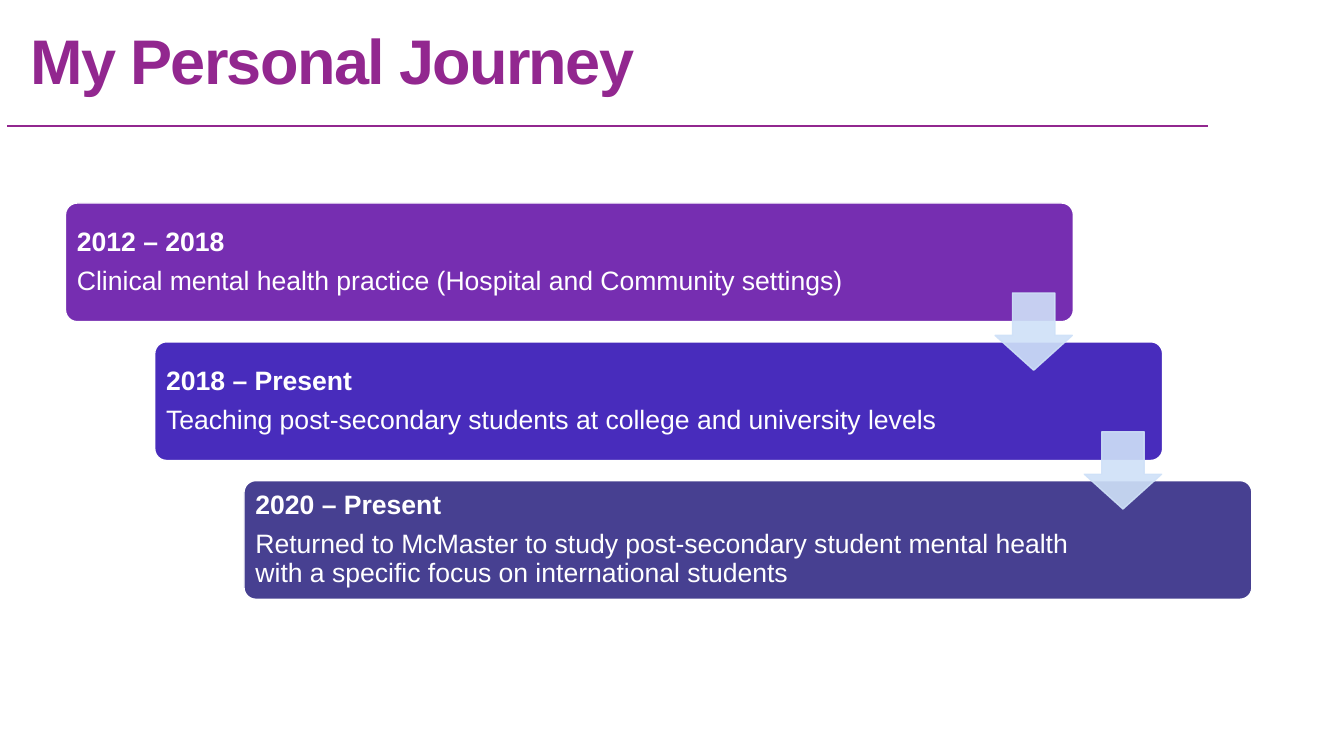
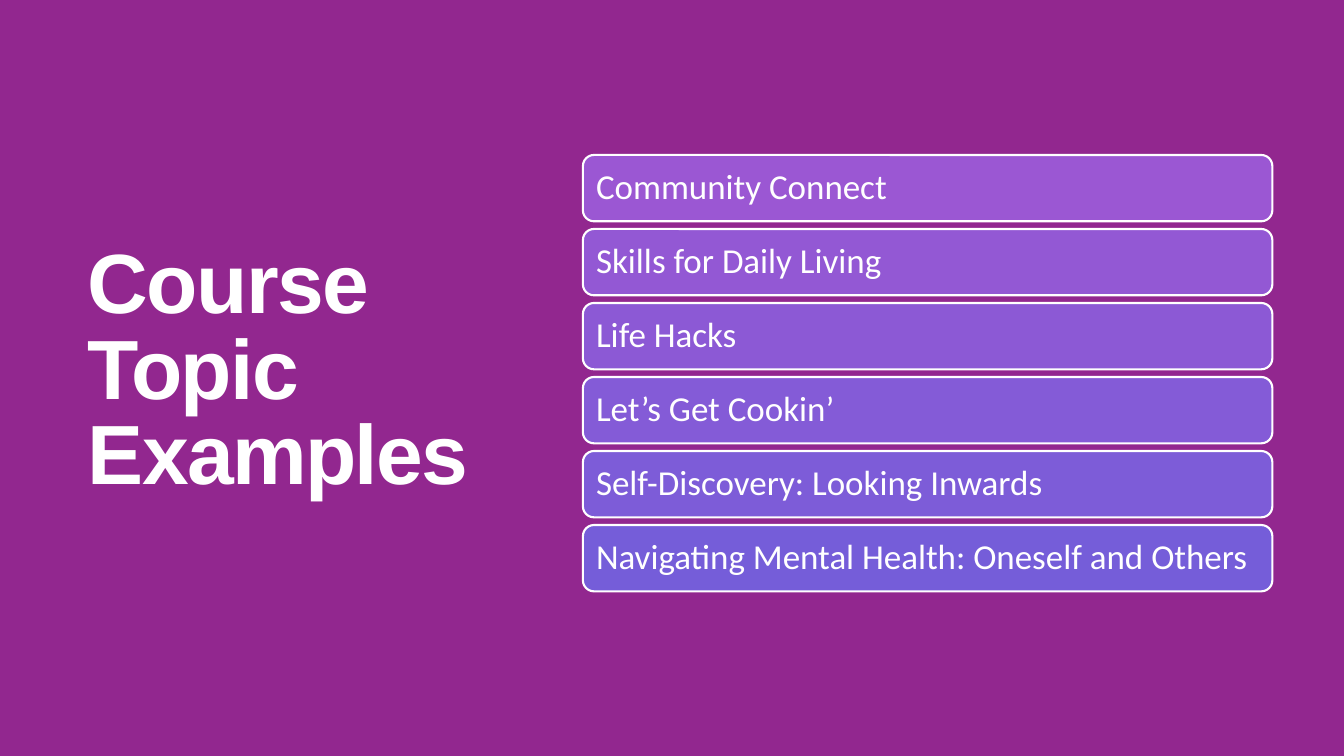
from lxml import etree
from pptx import Presentation
from pptx.dml.color import RGBColor
from pptx.enum.shapes import MSO_CONNECTOR, MSO_SHAPE as SHAPE
from pptx.enum.text import MSO_ANCHOR as ANCHOR, MSO_AUTO_SIZE as FIT, PP_ALIGN as ALIGN
from pptx.oxml.ns import qn
from pptx.util import Inches, Pt

COLORS = {
    "purple": "92278F", "white": "FFFFFF", "arrow": "CFE1F8",
    "clinical": "762EB1", "teaching": "482CBC", "study": "474091",
    "first": "9B57D3", "last": "755DD9",
}
RGB = {name: RGBColor.from_string(code) for name, code in COLORS.items()}

prs = Presentation()
prs.slide_width, prs.slide_height = Inches(13.333), Inches(7.5)
W, H = prs.slide_width / 100, prs.slide_height / 100  # one percent of the slide


def add_titled_slide(text, box, size, color):
    """Add a title-only slide; box is in percent of the slide."""
    s = prs.slides.add_slide(prs.slide_layouts[5])
    title = s.shapes.title
    x, y, w, h = box
    title.left, title.top = int(x * W), int(y * H)
    title.width, title.height = int(w * W), int(h * H)
    tf = title.text_frame
    tf.text = text
    tf.word_wrap, tf.auto_size, tf.vertical_anchor = True, FIT.NONE, ANCHOR.MIDDLE
    p = tf.paragraphs[0]
    p.alignment, p.line_spacing = ALIGN.LEFT, 0.85
    p.font.name, p.font.size, p.font.bold = "Arial", Pt(size), True
    p.font.color.rgb = color
    p.runs[0].font._element.set("spc", "-120")
    return s


def add_block(s, kind, box, fill, line, line_width, lines=(), font=None, size=None, inset=0.1):
    """Add a filled shape with left-aligned lines; box is in percent of the slide."""
    x, y, w, h = box
    sp = s.shapes.add_shape(kind, int(x * W), int(y * H), int(w * W), int(h * H))
    sp.shadow.inherit = False
    sp.fill.solid()
    sp.fill.fore_color.rgb = fill
    sp.line.color.rgb = line
    sp.line.width = Pt(line_width)
    tf = sp.text_frame
    tf.word_wrap, tf.vertical_anchor = True, ANCHOR.MIDDLE
    tf.margin_left = tf.margin_right = tf.margin_top = tf.margin_bottom = Inches(inset)
    for i, text in enumerate(lines):
        p = tf.add_paragraph() if i else tf.paragraphs[0]
        p.text = text
        p.alignment, p.line_spacing = ALIGN.LEFT, 0.9
        p.font.name, p.font.size = font, Pt(size)
        p.font.color.rgb = RGB["white"]
        if i:
            p.space_before = Pt(7)
    return sp


# Slide 1: title and rule
s = add_titled_slide("My Personal Journey", (1.5, -3.47, 88.35, 24.13), 45, RGB["purple"])
rule = s.shapes.add_connector(
    MSO_CONNECTOR.STRAIGHT, int(0.53 * W), int(16.67 * H), int(89.85 * W), int(16.67 * H))
rule.line.color.rgb = RGB["purple"]
rule.line.width = Pt(0.75)
etree.SubElement(rule._element.spPr, qn("a:effectLst"))

# Slide 1: staircase of steps
STEP_X, STEP_Y = 6.64, 18.36
steps = [
    ("clinical", "2012 – 2018",
     "Clinical mental health practice (Hospital and Community settings)"),
    ("teaching", "2018 – Present",
     "Teaching post-secondary students at college and university levels"),
    ("study", "2020 – Present",
     "Returned to McMaster to study post-secondary student mental health "
     "with a specific focus on international students"),
]
for i, (color, years, role) in enumerate(steps):
    box = (4.87 + i * STEP_X, 26.85 + i * STEP_Y, 75, 15.7)
    sp = add_block(s, SHAPE.ROUNDED_RECTANGLE, box, RGB[color], RGB["white"], 1,
                   (years, role), "Arial", 19, 0.08)
    sp.adjustments[0] = 0.1
    sp.text_frame.margin_right = Inches(1.73)
    sp.text_frame.paragraphs[0].font.bold = True

# Slide 1: translucent arrows between the steps
for i in range(len(steps) - 1):
    box = (74.04 + i * STEP_X, 38.75 + i * STEP_Y, 5.75, 10.22)
    arrow = add_block(s, SHAPE.DOWN_ARROW, box, RGB["arrow"], RGB["arrow"], 1)
    arrow.adjustments[0], arrow.adjustments[1] = 0.55, 0.45
    for color in arrow._element.spPr.iter(qn("a:srgbClr")):
        etree.SubElement(color, qn("a:alpha"), val="90000")

# Slide 2: title on a purple background
s = add_titled_slide("Course Topic Examples", (5.78, 9.33, 32.78, 80.13), 60, RGB["white"])
s.background.fill.solid()
s.background.fill.fore_color.rgb = RGB["purple"]

# Slide 2: topic bars, shading evenly from the first colour to the last
topics = [
    "Community Connect", "Skills for Daily Living", "Life Hacks", "Let’s Get Cookin’",
    "Self-Discovery: Looking Inwards", "Navigating Mental Health: Oneself and Others",
]
for i, topic in enumerate(topics):
    share = i / (len(topics) - 1)
    fill = RGBColor(*(round(a + (b - a) * share) for a, b in zip(RGB["first"], RGB["last"])))
    add_block(s, SHAPE.ROUNDED_RECTANGLE, (43.37, 20.5 + i * 9.79, 51.3, 8.77), fill,
              RGB["white"], 1.5, [topic], "Calibri", 25)

prs.save("out.pptx")
